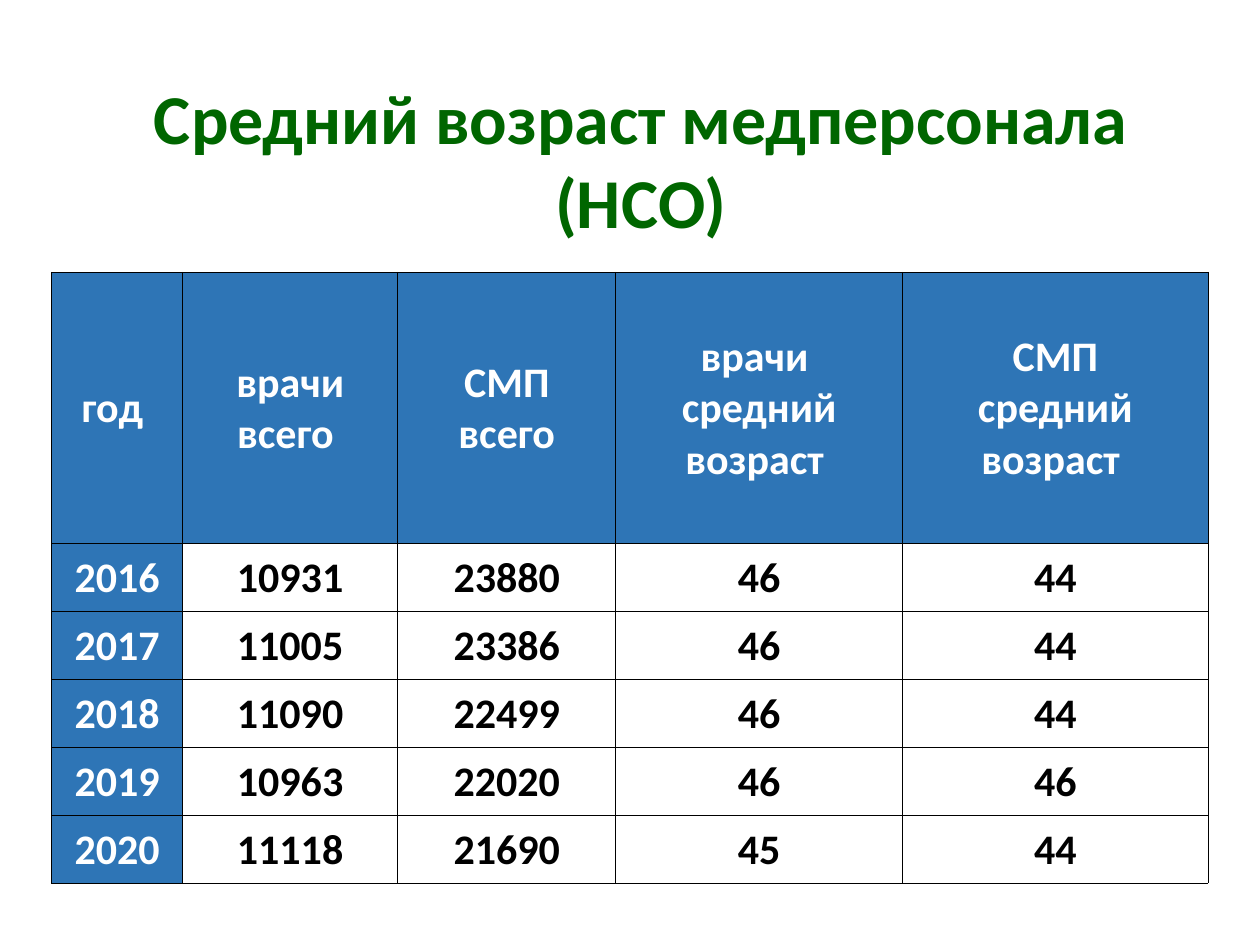
from typing import NamedTuple

from lxml import etree
from pptx import Presentation
from pptx.dml.color import RGBColor
from pptx.enum.text import MSO_ANCHOR, MSO_AUTO_SIZE, PP_ALIGN
from pptx.oxml.ns import qn
from pptx.util import Cm, Pt

CENTER = PP_ALIGN.CENTER
MIDDLE = MSO_ANCHOR.MIDDLE
FIT_SHAPE = MSO_AUTO_SIZE.SHAPE_TO_FIT_TEXT

FONT = "Calibri"
GREEN, BLUE, WHITE, BLACK = "006600", "2E75B6", "FFFFFF", "000000"
LEFT = 1.04
HEADER_HEIGHT, ROW_HEIGHT = 5.46, 1.37
CELL_FORMAT = {
    "margin_left": Cm(0.03),
    "margin_right": Cm(0.03),
    "margin_top": Cm(0.03),
    "margin_bottom": 0,
    "vertical_anchor": MIDDLE,
}


class Column(NamedTuple):
    heading: str
    width: float
    values: tuple


COLUMNS = [
    Column("год ", 2.64, (2016, 2017, 2018, 2019, 2020)),
    Column("врачи всего ", 4.34, (10931, 11005, 11090, 10963, 11118)),
    Column("СМП\nвсего", 4.39, (23880, 23386, 22499, 22020, 21690)),
    Column("врачи \nсредний возраст ", 5.79, (46, 46, 46, 46, 45)),
    Column("СМП\nсредний возраст ", 6.15, (44, 44, 44, 46, 44)),
]


def rgb(code: str) -> RGBColor:
    return RGBColor.from_string(code)


def write_text(frame, text: str, size: float, color: str) -> None:
    """Fill the frame with centred bold text, one paragraph per line."""
    frame.text = text
    for paragraph in frame.paragraphs:
        paragraph.alignment = CENTER
        for run in paragraph.runs:
            font = run.font
            font.name, font.size, font.bold = FONT, Pt(size), True
            font.color.rgb = rgb(color)


def add_borders(cell, color: str, width: float) -> None:
    """Put the four side lines ahead of the cell's fill, as the schema asks."""
    properties = cell._tc.get_or_add_tcPr()
    for position, side in enumerate(("a:lnL", "a:lnR", "a:lnT", "a:lnB")):
        line = etree.Element(qn(side), w=str(Pt(width)))
        fill = etree.SubElement(line, qn("a:solidFill"))
        etree.SubElement(fill, qn("a:srgbClr"), val=color)
        properties.insert(position, line)


def format_cell(cell, text: str, is_heading: bool) -> None:
    for attribute, value in CELL_FORMAT.items():
        setattr(cell, attribute, value)
    write_text(cell.text_frame, text, 24, WHITE if is_heading else BLACK)
    cell.fill.solid()
    cell.fill.fore_color.rgb = rgb(BLUE if is_heading else WHITE)
    add_borders(cell, BLACK, 0.5)


def add_title(slide) -> None:
    title = slide.shapes.add_textbox(Cm(LEFT), Cm(1.37), Cm(23.75), Cm(3.68))
    title.text_frame.word_wrap = True
    title.text_frame.auto_size = FIT_SHAPE
    write_text(title.text_frame, "Средний возраст медперсонала (НСО)", 40, GREEN)


def add_age_table(slide, columns: list[Column]) -> None:
    row_count = 1 + len(columns[0].values)
    width = sum(column.width for column in columns)
    height = HEADER_HEIGHT + ROW_HEIGHT * (row_count - 1)
    table = slide.shapes.add_table(
        row_count, len(columns), Cm(LEFT), Cm(5.49), Cm(width), Cm(height)
    ).table
    for row_index, row in enumerate(table.rows):
        row.height = Cm(ROW_HEIGHT if row_index else HEADER_HEIGHT)
    for column_index, column in enumerate(columns):
        table.columns[column_index].width = Cm(column.width)
        for row_index, value in enumerate((column.heading, *column.values)):
            is_heading = row_index == 0 or column_index == 0
            format_cell(table.cell(row_index, column_index), str(value), is_heading)


def main() -> None:
    presentation = Presentation()
    presentation.slide_width, presentation.slide_height = Cm(25.4), Cm(19.05)
    slide = presentation.slides.add_slide(presentation.slide_layouts[6])
    add_title(slide)
    add_age_table(slide, COLUMNS)
    presentation.save("out.pptx")


if __name__ == "__main__":
    main()
